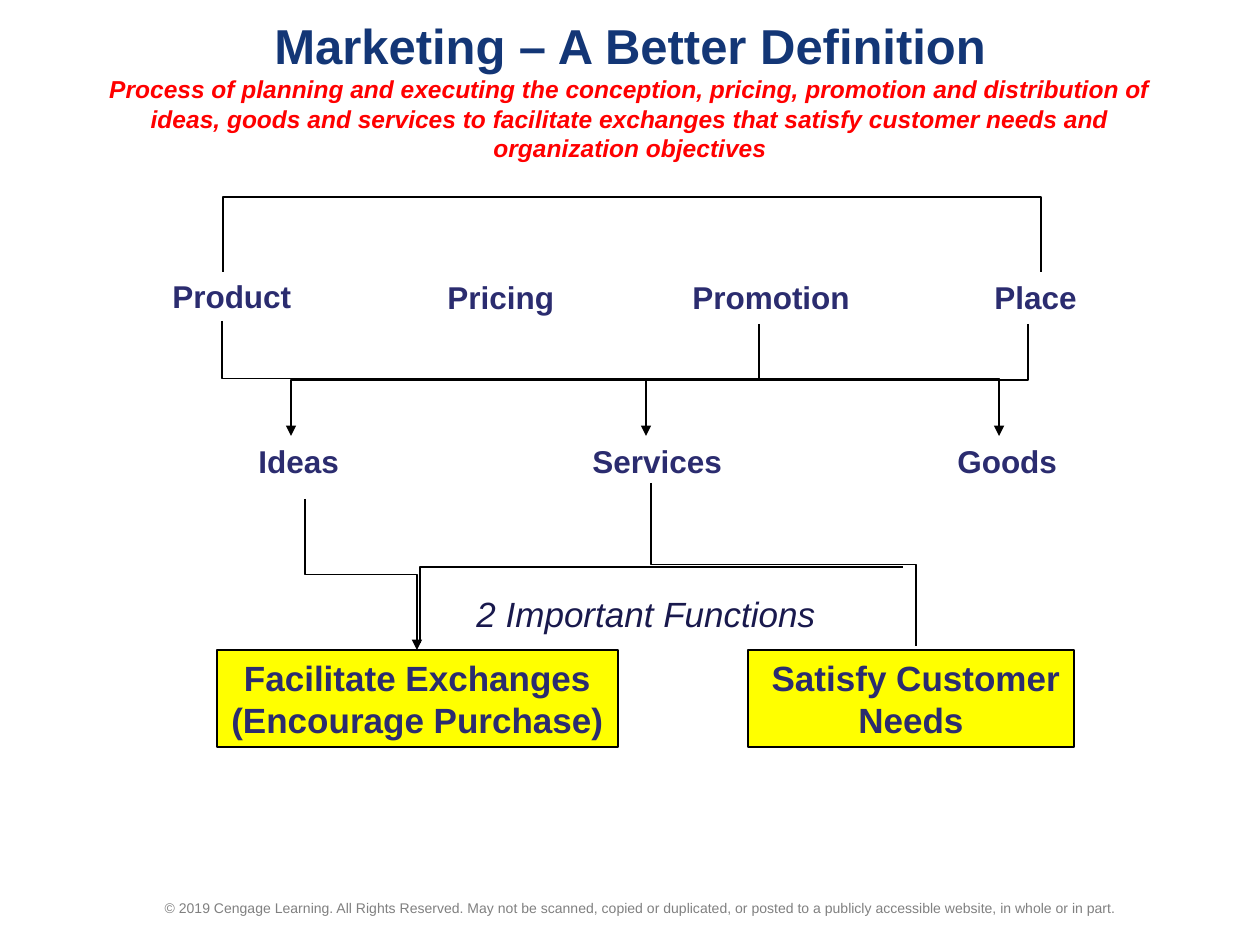
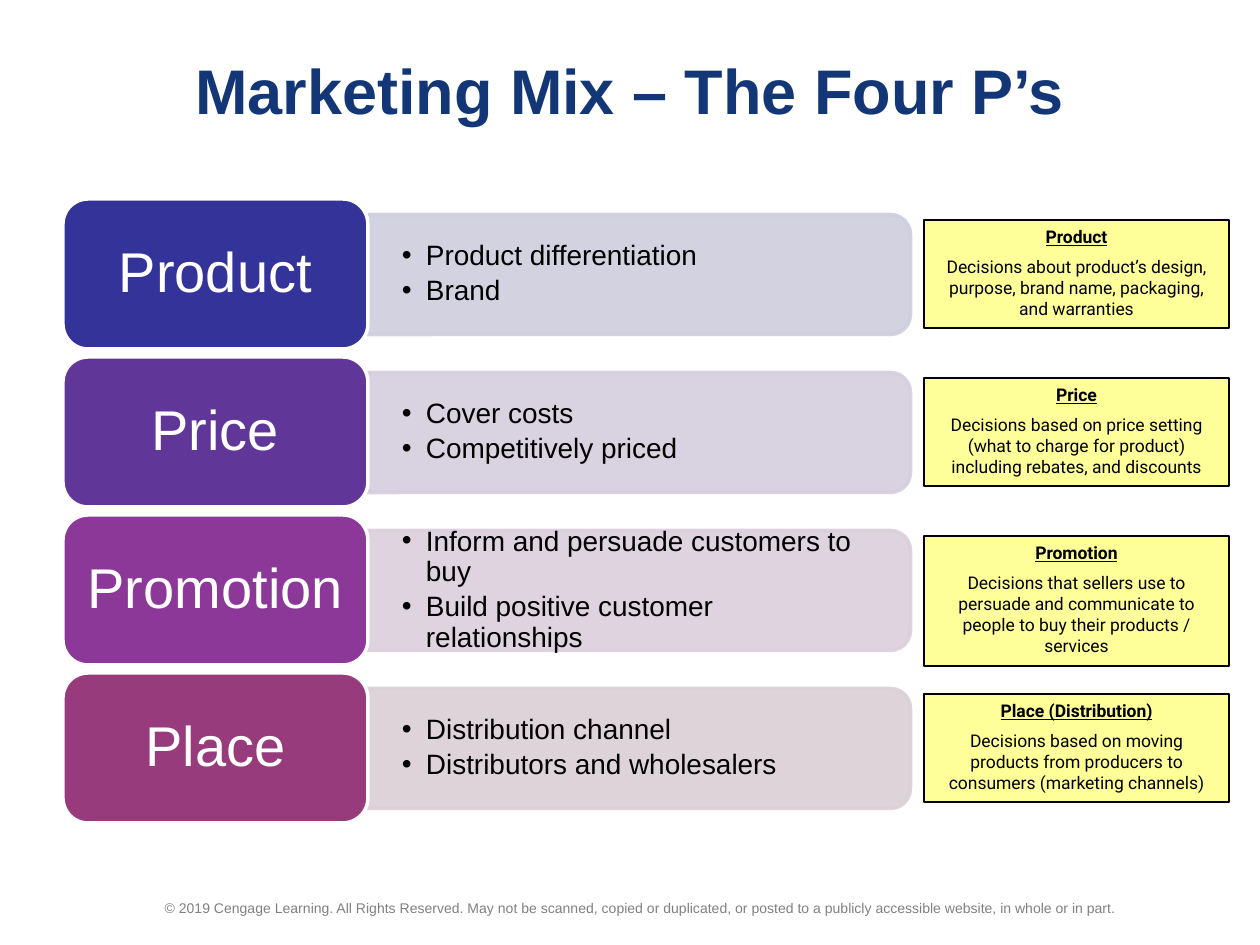
from dataclasses import dataclass
from typing import NamedTuple

from lxml.etree import SubElement
from pptx import Presentation
from pptx.dml.color import RGBColor
from pptx.enum.shapes import MSO_CONNECTOR, MSO_SHAPE
from pptx.enum.text import MSO_ANCHOR, PP_ALIGN
from pptx.oxml.ns import qn
from pptx.util import Emu, Pt

PX_PER_INCH = 126
COLORS = {
    "title": "133676", "definition": "FF0000", "footer": "808080",
    "label": "2B2C6F", "functions": "19194D", "black": "000000",
    "white": "FFFFFF", "function_box": "FFFF00", "note": "FFFF99",
    "product": "333399", "price": "613699",
    "promotion": "8C3898", "place": "983B7C",
    "product_band": "CECEDE", "price_band": "D5CEDD",
    "promotion_band": "DBCFDC", "place_band": "DCCFD7",
}
COPYRIGHT = ("© 2019 Cengage Learning. All Rights Reserved. May not be scanned, "
             "copied or duplicated, or posted to a publicly accessible website, "
             "in whole or in part.")
DEFINITION = ("Process of planning and executing the conception, pricing, promotion "
              "and distribution of ideas, goods and services to facilitate exchanges "
              "that satisfy customer needs and organization objectives")


class Area(NamedTuple):
    left: int
    top: int
    width: int
    height: int


class Point(NamedTuple):
    x: int
    y: int


@dataclass(frozen=True)
class Style:
    size: int
    color: str
    bold: bool = False
    italic: bool = False
    underline: bool = False
    font: str = "Arial"


@dataclass(frozen=True)
class Label:
    text: str
    area: Area


@dataclass(frozen=True)
class Elbow:
    """A bent line; a corner turns once, otherwise it runs down, across, down."""
    start: Point
    end: Point
    arrow: bool = False
    corner: bool = False


@dataclass(frozen=True)
class MixRow:
    name: str
    key: str
    bullets: tuple[str, ...]
    note_title: str
    note: str
    note_height: int = 108


LABEL = Style(18, "label", bold=True)
FUNCTION = Style(20, "label", bold=True)
NOTE = Style(10, "black", font="Roboto")
NOTE_TITLE = Style(10, "black", bold=True, underline=True, font="Roboto")

LABELS = (
    Label("Product", Area(160, 271, 164, 64)),
    Label("Pricing", Area(435, 272, 145, 64)),
    Label("Promotion", Area(680, 272, 213, 64)),
    Label("Place", Area(982, 272, 118, 64)),
    Label("Ideas", Area(246, 436, 118, 64)),
    Label("Services", Area(580, 436, 169, 64)),
    Label("Goods", Area(945, 436, 137, 64)),
)
FUNCTION_BOXES = (
    Label("Facilitate Exchanges\n(Encourage Purchase)", Area(217, 650, 401, 97)),
    Label(" Satisfy Customer\nNeeds", Area(748, 650, 326, 97)),
)
ELBOWS = (
    Elbow(Point(707, 197), Point(223, 272), corner=True),
    Elbow(Point(664, 197), Point(1041, 272), corner=True),
    Elbow(Point(222, 321), Point(999, 436), arrow=True),
    Elbow(Point(1028, 324), Point(646, 436), arrow=True),
    Elbow(Point(759, 324), Point(291, 436), arrow=True),
    Elbow(Point(305, 499), Point(417, 650), arrow=True),
    Elbow(Point(651, 483), Point(916, 646)),
    Elbow(Point(903, 567), Point(420, 643), corner=True),
)
MIX_ROWS = (
    MixRow("Product", "product", ("Product differentiation", "Brand"), "Product",
           "Decisions about product’s design, purpose, brand name, packaging, "
           "and warranties"),
    MixRow("Price", "price", ("Cover costs", "Competitively priced"), "Price",
           "Decisions based on price setting (what to charge for product) "
           "including rebates, and discounts"),
    MixRow("Promotion", "promotion",
           ("Inform and persuade customers to buy",
            "Build positive customer relationships"), "Promotion",
           "Decisions that sellers use to persuade and communicate to people "
           "to buy their products / services", 130),
    MixRow("Place", "place", ("Distribution channel", "Distributors and wholesalers"),
           "Place (Distribution)",
           "Decisions based on moving products from producers to consumers "
           "(marketing channels)"),
)
FIRST_ROW_TOP = 199
ROW_PITCH = 158


def px(length: float) -> Emu:
    return Emu(round(length * 914400 / PX_PER_INCH))


def place(area: Area) -> tuple[Emu, ...]:
    return tuple(px(length) for length in area)


def color(name: str) -> RGBColor:
    return RGBColor.from_string(COLORS[name])


def add_span(para, text: str, style: Style) -> None:
    span = para.add_run()
    span.text = text
    font = span.font
    font.name, font.size = style.font, Pt(style.size)
    font.bold, font.italic, font.underline = style.bold, style.italic, style.underline
    font.color.rgb = color(style.color)


def fill_frame(frame, lines, align=PP_ALIGN.LEFT, wrap=True,
               anchor=MSO_ANCHOR.TOP, gap_before=0) -> None:
    """Write (text, style) pairs as one paragraph each."""
    frame.word_wrap = wrap
    frame.vertical_anchor = anchor
    for index, (text, style) in enumerate(lines):
        para = frame.add_paragraph() if index else frame.paragraphs[0]
        para.alignment = align
        if index and gap_before:
            para.space_before = Pt(gap_before)
        add_span(para, text, style)


def add_box(page, kind, area: Area, fill: str, line: str, line_width: float):
    box = page.shapes.add_shape(kind, *place(area))
    box.shadow.inherit = False
    box.fill.solid()
    box.fill.fore_color.rgb = color(fill)
    box.line.color.rgb = color(line)
    box.line.width = Pt(line_width)
    return box


def add_text(page, area: Area, lines, **options):
    box = page.shapes.add_textbox(*place(area))
    fill_frame(box.text_frame, lines, **options)
    return box


def add_page(deck, title_lines):
    page = deck.slides.add_slide(deck.slide_layouts.get_by_name("Title Only"))
    title = page.shapes.title
    title.left, title.top, title.width, title.height = place(Area(63, 21, 1134, 136))
    fill_frame(title.text_frame, title_lines[:1], align=PP_ALIGN.CENTER,
               anchor=MSO_ANCHOR.MIDDLE)
    para = title.text_frame.paragraphs[0]
    for text, style in title_lines[1:]:
        para.add_line_break()
        add_span(para, text, style)
    add_text(page, Area(95, 892, 1092, 32), [(COPYRIGHT, Style(8, "footer"))],
             align=PP_ALIGN.CENTER, anchor=MSO_ANCHOR.MIDDLE)
    return page


def add_elbow(page, elbow: Elbow) -> None:
    (x1, y1), (x2, y2) = elbow.start, elbow.end
    width, height = abs(x2 - x1), abs(y2 - y1)
    rightward = x2 > x1
    if elbow.corner:
        turn, flip = (0, None) if rightward else (180, "flipV")
    else:
        width, height = height, width
        turn, flip = (270, "flipH") if rightward else (90, None)
    left, top = (x1 + x2 - width) / 2, (y1 + y2 - height) / 2
    connector = page.shapes.add_connector(
        MSO_CONNECTOR.ELBOW, px(left), px(top), px(left + width), px(top + height))
    connector.line.color.rgb = color("black")
    connector.line.width = Pt(0.75)
    properties = connector._element.spPr
    frame = properties.find(qn("a:xfrm"))
    if turn:
        frame.set("rot", str(turn * 60000))
    if flip:
        frame.set(flip, "1")
    if elbow.corner:
        properties.find(qn("a:prstGeom")).set("prst", "bentConnector2")
    if elbow.arrow:
        SubElement(properties.find(qn("a:ln")), qn("a:tailEnd"), type="triangle")
    SubElement(properties, qn("a:effectLst"))


def add_band(page, top: int, key: str) -> None:
    """Draw a bar whose right corners are round: a tall shape turned a quarter."""
    left, length, thickness = 368, 543, 120
    area = Area(left + (length - thickness) // 2, top - (length - thickness) // 2,
                thickness, length)
    band = add_box(page, MSO_SHAPE.ROUND_2_SAME_RECTANGLE, area,
                   f"{key}_band", f"{key}_band", 2)
    band.rotation = 90
    for tint in band._element.spPr.iter(qn("a:srgbClr")):
        SubElement(tint, qn("a:alpha"), val="90000")


def add_bullets(page, top: int, bullets: tuple[str, ...]) -> None:
    box = add_text(page, Area(368, top, 537, 108),
                   [(text, Style(16, "black")) for text in bullets],
                   anchor=MSO_ANCHOR.MIDDLE)
    frame = box.text_frame
    frame.margin_left = frame.margin_right = px(34)
    frame.margin_top = frame.margin_bottom = px(18)
    for para in frame.paragraphs:
        para.line_spacing = 0.9
        para.space_after = Pt(3)
        properties = para._p.get_or_add_pPr()
        properties.set("marL", str(px(24)))
        properties.set("indent", str(px(-24)))
        SubElement(properties, qn("a:buFont"), typeface="Arial")
        SubElement(properties, qn("a:buChar"), char="•")


def add_mix_row(page, top: int, row: MixRow) -> None:
    add_band(page, top + 15, row.key)
    add_bullets(page, top + 21, row.bullets)
    name = add_box(page, MSO_SHAPE.ROUNDED_RECTANGLE, Area(63, top, 305, 150),
                   row.key, "white", 2)
    fill_frame(name.text_frame, [(row.name, Style(32, "white"))],
               align=PP_ALIGN.CENTER, anchor=MSO_ANCHOR.MIDDLE)
    name.text_frame.paragraphs[0].line_spacing = 0.9
    note = add_box(page, MSO_SHAPE.RECTANGLE, Area(924, top + 21, 305, row.note_height),
                   "note", "black", 0.75)
    fill_frame(note.text_frame, [(row.note_title, NOTE_TITLE), (row.note, NOTE)],
               align=PP_ALIGN.CENTER, gap_before=5)


def build_definition(deck) -> None:
    page = add_page(deck, [
        ("Marketing – A Better Definition", Style(28, "title", bold=True)),
        (DEFINITION, Style(14, "definition", bold=True, italic=True))])
    for function in FUNCTION_BOXES:
        box = add_box(page, MSO_SHAPE.RECTANGLE, function.area,
                      "function_box", "black", 0.75)
        fill_frame(box.text_frame,
                   [(line, FUNCTION) for line in function.text.split("\n")],
                   align=PP_ALIGN.CENTER, wrap=False)
    for label in LABELS:
        add_text(page, label.area, [(label.text, LABEL)], wrap=False)
    add_text(page, Area(464, 586, 410, 55),
             [("2 Important Functions", Style(20, "functions", italic=True))])
    for elbow in ELBOWS:
        add_elbow(page, elbow)


def build_marketing_mix(deck) -> None:
    page = add_page(deck, [("Marketing Mix – The Four P’s",
                            Style(36, "title", bold=True))])
    for index, row in enumerate(MIX_ROWS):
        add_mix_row(page, FIRST_ROW_TOP + index * ROW_PITCH, row)


def main() -> None:
    deck = Presentation()
    deck.slide_width, deck.slide_height = px(1260), px(945)
    build_definition(deck)
    build_marketing_mix(deck)
    deck.save("out.pptx")


if __name__ == "__main__":
    main()
